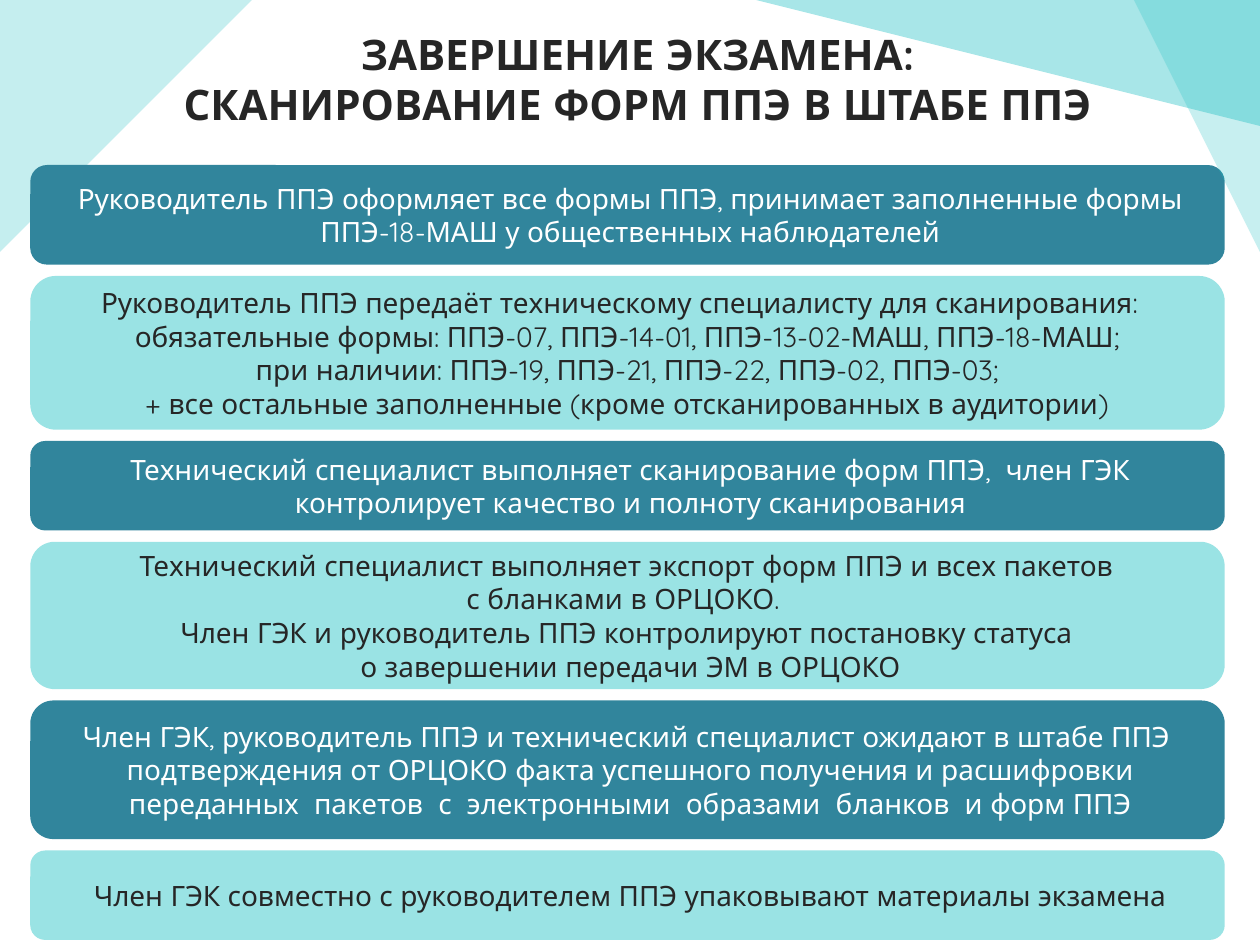
from lxml import etree
from pptx import Presentation, util as u
from pptx.dml.color import RGBColor
from pptx.enum import shapes, text
from pptx.oxml.ns import qn

COLORS = {"dark": "31859C", "light": "9AE3E4", "accent": "20C0C4",
          "ink": "262626", "white": "FFFFFF"}
FONT = "Quicksand"
WIDTH, HEIGHT = 10, 7.5
CARD_LEFT, CARD_TOP, CARD_WIDTH, CARD_GAP = 0.24, 1.31, 9.48, 0.09

TITLE = "ЗАВЕРШЕНИЕ ЭКЗАМЕНА:\nСКАНИРОВАНИЕ ФОРМ ППЭ В ШТАБЕ ППЭ"

# Height, left indent and paragraphs of each step, from top to bottom
STEPS = [
    (0.79, 0.05, ["Руководитель ППЭ оформляет все формы ППЭ, принимает заполненные "
                  "формы ППЭ-18-МАШ у общественных наблюдателей"]),
    (1.22, 0, ["Руководитель ППЭ передаёт техническому специалисту для сканирования:  \n"
               "обязательные формы: ППЭ-07, ППЭ-14-01, ППЭ-13-02-МАШ, ППЭ-18-МАШ;",
               "при наличии: ППЭ-19, ППЭ-21, ППЭ-22, ППЭ-02, ППЭ-03;",
               "+ все остальные заполненные (кроме отсканированных в аудитории)"]),
    (0.71, 0.05, ["Технический специалист выполняет сканирование форм ППЭ,  член ГЭК "
                  "контролирует качество и полноту сканирования"]),
    (1.17, 0.05, ["Технический специалист выполняет экспорт форм ППЭ и всех пакетов \n"
                  "с бланками в ОРЦОКО.  ",
                  "Член ГЭК и руководитель ППЭ контролируют постановку статуса \n"
                  "о завершении передачи ЭМ в ОРЦОКО"]),
    (1.1, 0.05, ["Член ГЭК, руководитель ППЭ и технический специалист ожидают в штабе ППЭ  "
                 "подтверждения от ОРЦОКО факта успешного получения и расшифровки "
                 "переданных  пакетов  с  электронными  образами  бланков  и форм ППЭ"]),
    (0.71, 0.05, ["Член ГЭК совместно с руководителем ППЭ упаковывают материалы экзамена"]),
]

# Corner points and opacity in percent
LEFT_FACET = ([(0, 1.77), (0.25, 1.86), (2.14, 0.01), (0.01, 0.01)], 26)
RIGHT_FACETS = [
    ([(5.73, -0.02), (10.03, 0.93), (10.03, -0.03)], 39),
    ([(10.04, 1.73), (9.9, 1.83), (8.86, -0.03), (10.03, -0.03)], 25),
]


def paint(shape, color):
    shape.shadow.inherit = False
    shape.fill.solid()
    shape.fill.fore_color.rgb = RGBColor.from_string(COLORS[color])
    shape.line.fill.background()


def format_paragraph(paragraph, size, color, bold=False):
    paragraph.alignment = text.PP_ALIGN.CENTER
    paragraph.font.name = FONT
    paragraph.font.size = u.Pt(size)
    paragraph.font.bold = bold
    paragraph.font.color.rgb = RGBColor.from_string(COLORS[color])


def add_facet(slide, points, opacity):
    """Add a translucent background polygon."""
    builder = slide.shapes.build_freeform(*points[0], scale=u.Inches(1))
    builder.add_line_segments(points[1:], close=True)
    shape = builder.convert_to_shape()
    paint(shape, "accent")
    color = shape.fill._xPr.find(qn("a:solidFill"))[0]
    etree.SubElement(color, qn("a:alpha")).set("val", str(opacity * 1000))


def set_title(slide):
    title = slide.shapes.title
    title.left, title.top = u.Inches(0.16), u.Inches(0.05)
    title.width, title.height = u.Inches(9.8), u.Inches(1.15)
    title.text_frame.vertical_anchor = text.MSO_ANCHOR.MIDDLE
    paragraph = title.text_frame.paragraphs[0]
    paragraph.text = TITLE.replace("\n", "\v")
    format_paragraph(paragraph, 24, "ink", bold=True)


def add_step(slide, top, height, indent, lines, fill, ink):
    card = slide.shapes.add_shape(
        shapes.MSO_SHAPE.ROUNDED_RECTANGLE, u.Inches(CARD_LEFT), u.Inches(top),
        u.Inches(CARD_WIDTH), u.Inches(height))
    paint(card, fill)
    frame = card.text_frame
    frame.word_wrap = True
    frame.vertical_anchor = text.MSO_ANCHOR.MIDDLE
    for index, line in enumerate(lines):
        paragraph = frame.add_paragraph() if index else frame.paragraphs[0]
        paragraph.text = line.replace("\n", "\v")
        format_paragraph(paragraph, 16, ink)
        paragraph._p.get_or_add_pPr().set("marL", str(u.Inches(indent)))


def main():
    presentation = Presentation()
    presentation.slide_width = u.Inches(WIDTH)
    presentation.slide_height = u.Inches(HEIGHT)
    slide = presentation.slides.add_slide(presentation.slide_layouts[5])

    add_facet(slide, *LEFT_FACET)
    set_title(slide)
    top = CARD_TOP
    for index, (height, indent, lines) in enumerate(STEPS):
        fill, ink = ("light", "ink") if index % 2 else ("dark", "white")
        add_step(slide, top, height, indent, lines, fill, ink)
        top += height + CARD_GAP
    for points, opacity in RIGHT_FACETS:
        add_facet(slide, points, opacity)

    presentation.save("out.pptx")


if __name__ == "__main__":
    main()
